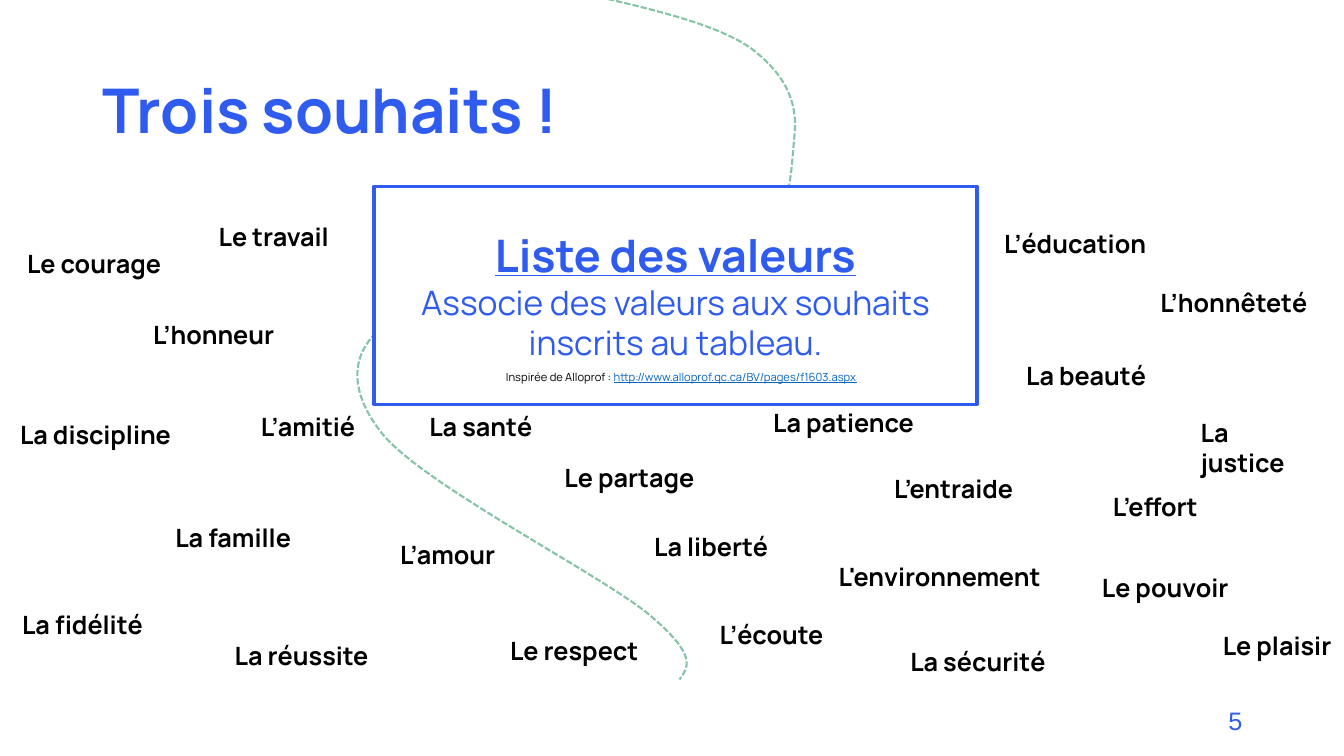
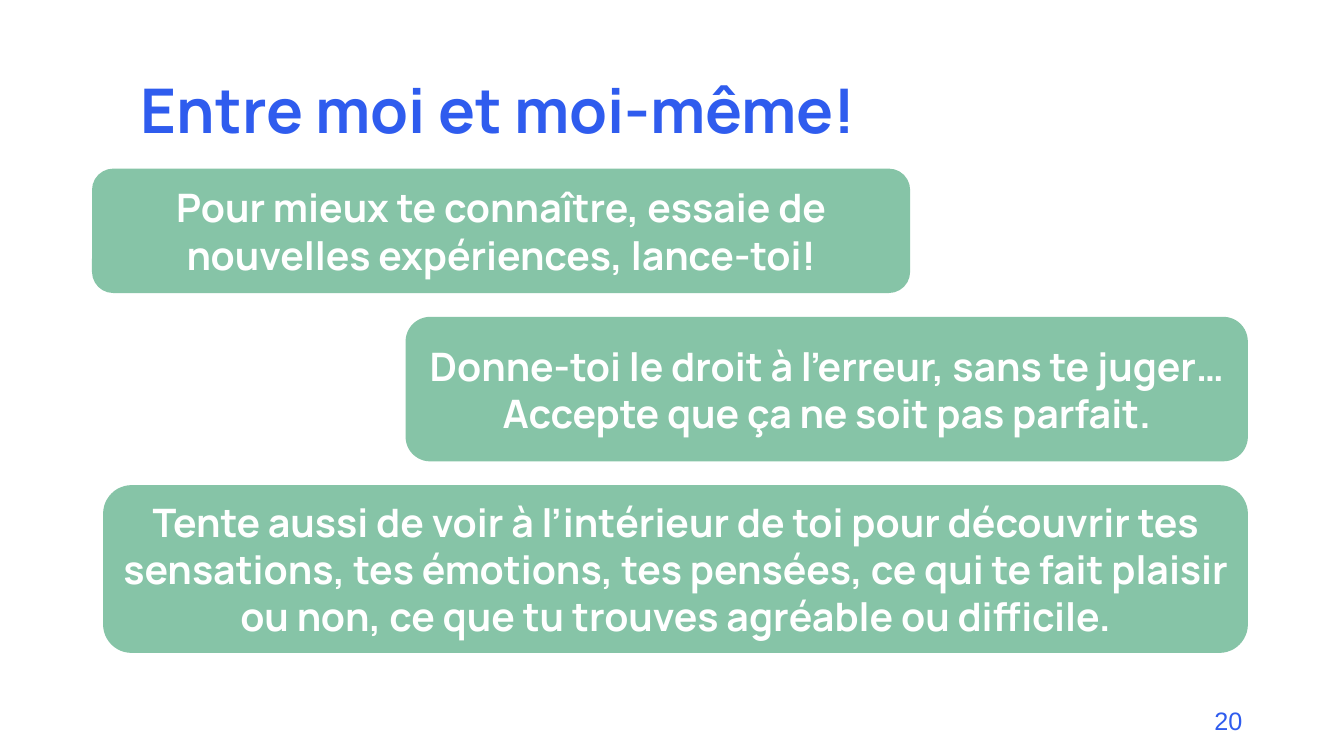
from dataclasses import dataclass

from lxml import etree
from pptx import Presentation
from pptx import util as u
from pptx.dml.color import RGBColor
from pptx.enum import dml, shapes, text
from pptx.oxml import ns


@dataclass(frozen=True)
class Theme:
    blue: str = "2F5CEE"
    green: str = "86C4A7"
    white: str = "FFFFFF"
    black: str = "000000"
    link: str = "0563C1"
    font: str = "Manrope"
    number_font: str = "Arial"
    title: int = 44
    heading: int = 32
    advice: int = 28
    instruction: int = 24
    body: int = 18
    source: int = 8


THEME = Theme()
LEFT, CENTER, RIGHT = (text.PP_ALIGN.LEFT, text.PP_ALIGN.CENTER, text.PP_ALIGN.RIGHT)

VALUES = [
    ("L’amitié", 2.49, 4.03, 1.17),
    ("L’amour", 3.87, 5.3, 1.2),
    ("La famille", 1.64, 5.13, 1.41),
    ("La fidélité", 0.12, 6, 1.42),
    ("La discipline", 0.1, 4.11, 1.72),
    ("La liberté", 6.39, 5.22, 1.35),
    ("Le respect", 4.96, 6.25, 1.49),
    ("La santé", 4.16, 4.03, 1.23),
    ("La patience", 7.57, 3.99, 1.61),
    ("L’écoute", 7.04, 6.09, 1.26),
    ("L’entraide", 8.77, 4.65, 1.43),
    ("L’honnêteté", 11.41, 2.8, 1.67),
    ("Le plaisir", 12.03, 6.2, 1.3),
    ("La réussite", 2.23, 6.3, 1.53),
    ("L'environnement", 8.22, 5.52, 2.25),
    ("Le courage", 0.17, 2.41, 1.57),
    ("L’honneur", 1.42, 3.12, 1.43),
    ("Le travail", 2.07, 2.15, 1.33),
    ("La beauté", 10.08, 3.53, 1.42),
    ("La sécurité", 8.93, 6.36, 1.54),
    ("L’éducation", 9.86, 2.22, 1.64),
    ("L’effort", 10.94, 4.83, 1.1),
    ("Le pouvoir", 10.83, 5.63, 1.48),
    ("Le partage", 5.5, 4.54, 1.52),
]
WRAPPED_VALUE = ("La justice", (11.81, 4.09, 1.36, 0.4))
SOURCE_LABEL = "Inspirée de Alloprof : "
SOURCE_ADDRESS = "http://www.alloprof.qc.ca/BV/pages/f1603.aspx"

PATH_BOX = (3.55, -0.01, 4.34, 6.75)
PATH_START = (6.03, -0.01)
PATH_CURVES = [
    ((6.58, 0.12), (7.14, 0.26), (7.45, 0.48)),
    ((7.75, 0.71), (7.92, 0.97), (7.88, 1.35)),
    ((7.84, 1.73), (7.85, 2.47), (7.21, 2.76)),
    ((6.57, 3.05), (4.62, 2.84), (4.05, 3.09)),
    ((3.48, 3.35), (3.39, 3.8), (3.79, 4.3)),
    ((4.19, 4.8), (5.94, 5.69), (6.43, 6.09)),
    ((6.92, 6.5), (6.83, 6.62), (6.74, 6.74)),
]

ADVICE = [
    ("Tente aussi de voir à l’intérieur de toi pour découvrir tes sensations, tes émotions, "
     "tes pensées, ce qui te fait plaisir ou non, ce que tu trouves agréable ou difficile.",
     (1.03, 4.82, 11.34, 1.65)),
    ("Pour mieux te connaître, essaie de nouvelles expériences, lance-toi!",
     (0.92, 1.68, 8.1, 1.22)),
    ("Donne-toi le droit à l’erreur, sans te juger… Accepte que ça ne soit pas parfait.",
     (4.03, 3.15, 8.34, 1.42)),
]


def color(value):
    return RGBColor.from_string(value)


def style(paragraph, size, ink, bold=False, align=LEFT, font=THEME.font):
    paragraph.alignment = align
    paragraph.font.name = font
    paragraph.font.size = u.Pt(size)
    paragraph.font.bold = bold
    paragraph.font.color.rgb = color(ink)


def add_text(slide, box, words, size, ink=THEME.black, wrap=True, **look):
    shape = slide.shapes.add_textbox(*map(u.Inches, box))
    frame = shape.text_frame
    frame.word_wrap = wrap
    if not wrap:
        frame.auto_size = text.MSO_AUTO_SIZE.SHAPE_TO_FIT_TEXT
    paragraph = frame.paragraphs[0]
    paragraph.add_run().text = words
    style(paragraph, size, ink, **look)
    return shape


def add_panel(slide, kind, box, fill, line, width):
    shape = slide.shapes.add_shape(kind, *map(u.Inches, box))
    shape.shadow.inherit = False
    shape.fill.solid()
    shape.fill.fore_color.rgb = color(fill)
    shape.line.color.rgb = color(line)
    shape.line.width = u.Pt(width)
    shape.text_frame.word_wrap = True
    shape.text_frame.vertical_anchor = text.MSO_ANCHOR.MIDDLE
    return shape


def add_title(slide, words, left, width):
    shape = add_text(slide, (left, 0.4, width, 1.45), words, THEME.title, THEME.blue, bold=True)
    shape.text_frame.vertical_anchor = text.MSO_ANCHOR.MIDDLE
    shape.text_frame.paragraphs[0].line_spacing = 0.9


def add_page_number(slide, number):
    add_text(slide, (9.42, 6.95, 3, 0.4), str(number), THEME.body, THEME.blue,
             align=RIGHT, font=THEME.number_font)


def curve_outline(shape, box, start, curves):
    left, top, width, height = map(u.Inches, box)
    shape.left, shape.top, shape.width, shape.height = left, top, width, height
    outline = shape.element.find(".//" + ns.qn("a:path"))
    for child in list(outline):
        outline.remove(child)
    outline.set("w", str(width))
    outline.set("h", str(height))
    steps = [("a:moveTo", [start])] + [("a:cubicBezTo", curve) for curve in curves]
    for tag, points in steps:
        step = etree.SubElement(outline, ns.qn(tag))
        for x, y in points:
            etree.SubElement(step, ns.qn("a:pt"), x=str(u.Inches(x) - left),
                             y=str(u.Inches(y) - top))


def add_winding_path(slide):
    builder = slide.shapes.build_freeform(*map(u.Inches, PATH_START))
    ends = [tuple(map(u.Inches, curve[-1])) for curve in PATH_CURVES]
    builder.add_line_segments(ends, close=False)
    winding_path = builder.convert_to_shape()
    curve_outline(winding_path, PATH_BOX, PATH_START, PATH_CURVES)
    winding_path.shadow.inherit = False
    winding_path.fill.background()
    winding_path.line.color.rgb = color(THEME.green)
    winding_path.line.width = u.Pt(1.5)
    winding_path.line.dash_style = dml.MSO_LINE.SQUARE_DOT


def build_values_slide(slide):
    add_winding_path(slide)
    add_page_number(slide, 5)
    panel = add_panel(slide, shapes.MSO_SHAPE.RECTANGLE, (3.71, 1.85, 5.98, 2.16),
                      THEME.white, THEME.blue, 2.25)
    heading = panel.text_frame.paragraphs[0]
    heading.text = "Liste des valeurs"
    style(heading, THEME.heading, THEME.blue, bold=True, align=CENTER)
    heading.font.underline = True
    instruction = panel.text_frame.add_paragraph()
    instruction.text = "Associe des valeurs aux souhaits inscrits au tableau."
    style(instruction, THEME.instruction, THEME.blue, align=CENTER)

    for words, left, top, width in VALUES:
        add_text(slide, (left, top, width, 0.4), words, THEME.body, wrap=False, bold=True)
    words, box = WRAPPED_VALUE
    wrapped = add_text(slide, box, words, THEME.body, bold=True)
    wrapped.text_frame.margin_right = u.Inches(0.25)
    add_title(slide, "Trois souhaits !", 0.92, 11.5)

    source = add_text(slide, (4.92, 3.62, 3.87, 0.24), SOURCE_LABEL, THEME.source, wrap=False)
    address = source.text_frame.paragraphs[0].add_run()
    address.text = SOURCE_ADDRESS
    address.font.color.rgb = color(THEME.link)
    address.font.underline = True


def build_advice_slide(slide):
    add_page_number(slide, 20)
    for words, box in ADVICE:
        panel = add_panel(slide, shapes.MSO_SHAPE.ROUNDED_RECTANGLE, box,
                          THEME.green, THEME.green, 1)
        paragraph = panel.text_frame.paragraphs[0]
        paragraph.text = words
        style(paragraph, THEME.advice, THEME.white, bold=True, align=CENTER)
    add_title(slide, "Entre moi et moi-même!", 1.3, 11.83)


def main():
    presentation = Presentation()
    presentation.slide_width = u.Inches(13.33)
    presentation.slide_height = u.Inches(7.5)
    for build in (build_values_slide, build_advice_slide):
        build(presentation.slides.add_slide(presentation.slide_layouts[6]))
    presentation.save("out.pptx")


if __name__ == "__main__":
    main()
